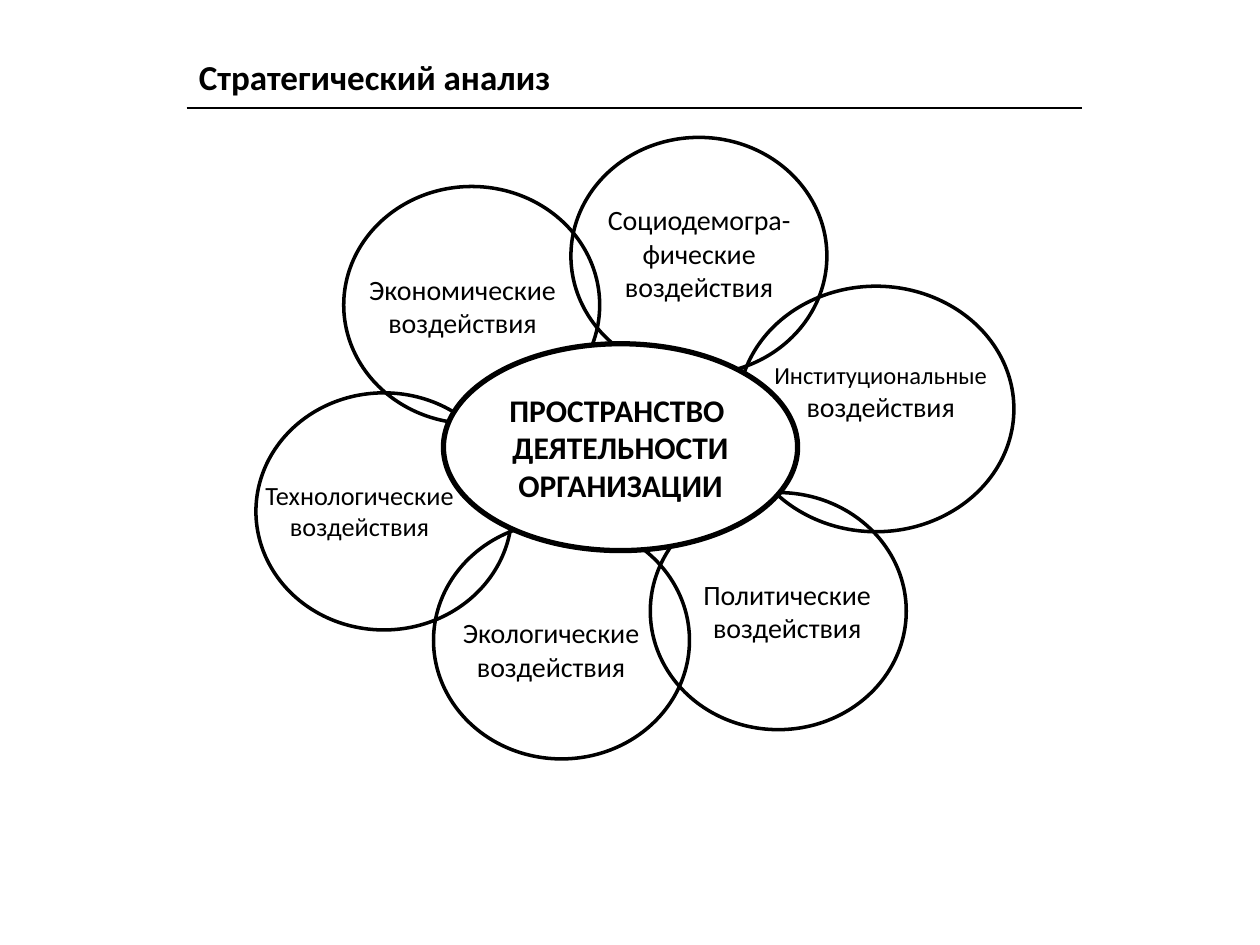
from pptx import Presentation
from pptx.dml.color import RGBColor
from pptx.enum.shapes import MSO_CONNECTOR, MSO_SHAPE
from pptx.enum.text import MSO_AUTO_SIZE, PP_ALIGN
from pptx.oxml.ns import qn
from pptx.util import Cm, Pt
from lxml.etree import SubElement

BLACK = RGBColor(0, 0, 0)
WHITE = RGBColor(255, 255, 255)

deck = Presentation()
deck.slide_width, deck.slide_height = Cm(25.4), Cm(19.05)
slide = deck.slides.add_slide(deck.slide_layouts[6])
shapes = slide.shapes


def add_oval(box, weight):
    oval = shapes.add_shape(MSO_SHAPE.OVAL, *map(Cm, box))
    oval.shadow.inherit = False
    oval.fill.background()
    oval.line.color.rgb = BLACK
    oval.line.width = Pt(weight)
    return oval


def add_label(box, lines, align=PP_ALIGN.CENTER, bold=False):
    """Each line is a paragraph, given as a list of (text, size) runs."""
    frame = shapes.add_textbox(*map(Cm, box)).text_frame
    frame.word_wrap = True
    frame.auto_size = MSO_AUTO_SIZE.SHAPE_TO_FIT_TEXT
    for i, line in enumerate(lines):
        para = frame.paragraphs[0] if i == 0 else frame.add_paragraph()
        para.alignment = align
        for text, size in line:
            run = para.add_run()
            run.text = text
            run.font.color.rgb = BLACK
            style = {"name": "Calibri", "size": Pt(size), "bold": bold}
            for key, value in style.items():
                setattr(run.font, key, value)


# Ring of influences around the core
wide, high = 5.16, 4.78
petals = [
    (11.51, 2.77, wide, high),
    (14.88, 5.77, 5.56, 4.95),
    (13.11, 9.93, wide, high),
    (8.74, 10.52, wide, high),
    (6.93, 3.76, wide, high),
    (5.16, 7.92, wide, high),
]
for box in petals:
    add_oval(box, 2)

core = add_oval((8.94, 6.93, 7.14, 4.17), 3)
core.fill.solid()
core.fill.fore_color.rgb = WHITE

words = ["ПРОСТРАНСТВО ", "ДЕЯТЕЛЬНОСТИ", "ОРГАНИЗАЦИИ"]
add_label((9.93, 7.75, 5.16, 2.57), [[(word, 18)] for word in words], bold=True)

labels = [
    ((7.14, 5.36, 4.37, 1.63), [("Экономические воздействия", 16)]),
    ((11.91, 3.96, 4.37, 2.31), [("Социодемогра-фические воздействия", 16)]),
    ((14.68, 7.14, 6.15, 1.52), [("Институциональные ", 14), ("воздействия", 16)]),
    ((13.89, 11.51, 3.96, 1.63), [("Политические воздействия", 16)]),
    ((8.53, 12.29, 5.16, 1.63), [("Экологические воздействия", 16)]),
    ((4.57, 9.53, 5.36, 1.55), [("Технологические воздействия", 15)]),
]
for box, runs in labels:
    add_label(box, [runs])

# Title and its rule
left, width = 3.76, 18.06
add_label((left, 0.99, width, 1.12), [[("Стратегический анализ", 20)]],
          align=PP_ALIGN.LEFT, bold=True)
rule = shapes.add_connector(MSO_CONNECTOR.STRAIGHT, Cm(left), Cm(2.18),
                            Cm(left + width), Cm(2.18))
rule.line.color.rgb = BLACK
rule.line.width = Pt(0.75)
SubElement(rule._element.spPr, qn("a:effectLst"))

deck.save("out.pptx")
